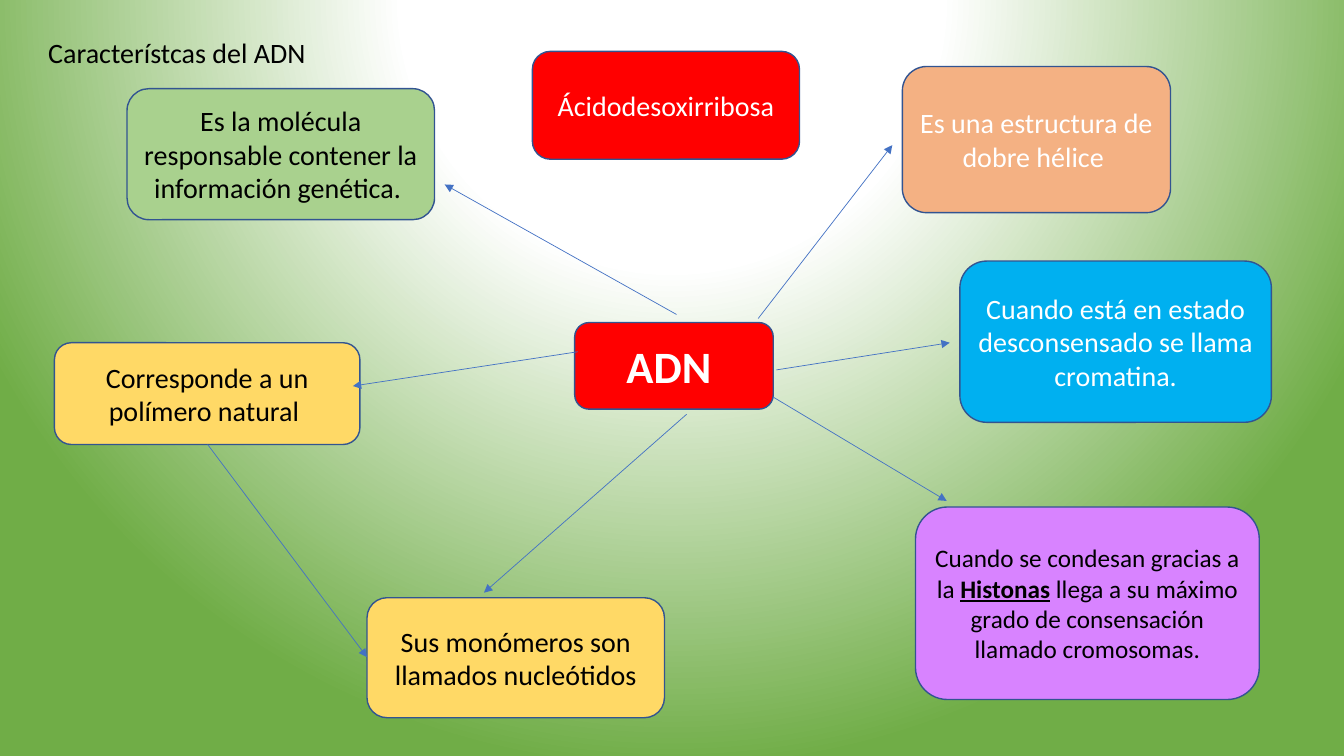
from pptx import Presentation
from pptx.dml.color import RGBColor
from pptx.enum import shapes, text
from pptx.oxml import parse_xml
from pptx.oxml.ns import nsdecls
from pptx.util import Inches, Pt


def color(hex_value):
    return RGBColor.from_string(hex_value)


def add_run(paragraph, words, size, ink, bold=False, underline=False):
    run = paragraph.add_run()
    run.text = words
    run.font.name = "Calibri"
    run.font.size = Pt(size)
    run.font.color.rgb = color(ink)
    run.font.bold = bold
    run.font.underline = underline


deck = Presentation()
deck.slide_width = Inches(13.33)
deck.slide_height = Inches(7.5)
slide = deck.slides.add_slide(deck.slide_layouts[6])

glow_stops = "".join(
    f'<a:gs pos="{percent * 1000}"><a:srgbClr val="{tint}"/></a:gs>'
    for percent, tint in [(0, "FFFFFF"), (35, "FFFFFF"), (100, "70AD47")]
)
slide.element.cSld.insert(0, parse_xml(
    f'<p:bg {nsdecls("p", "a")}><p:bgPr><a:gradFill rotWithShape="1">'
    f'<a:gsLst>{glow_stops}</a:gsLst><a:path path="circle">'
    '<a:fillToRect l="50000" t="-80000" r="50000" b="180000"/></a:path>'
    '</a:gradFill><a:effectLst/></p:bgPr></p:bg>'
))

BLACK, WHITE = "000000", "FFFFFF"
ideas = [
    (5.7, 3.2, 1.97, 0.86, "FF0000", 32, WHITE, [("ADN ", True, False)]),
    (0.54, 3.4, 3.03, 1.01, "FFD966", 20, BLACK,
     [("Corresponde a un polímero natural ", False, False)]),
    (1.26, 0.88, 3.05, 1.3, "A9D18E", 20, BLACK,
     [("Es la molécula responsable contener la información genética. ", False, False)]),
    (3.64, 5.93, 2.95, 1.19, "FFD966", 20, BLACK,
     [("Sus monómeros son llamados nucleótidos", False, False)]),
    (9.52, 2.59, 3.09, 1.6, "00B0F0", 20, WHITE,
     [("Cuando está en estado desconsensado se llama cromatina.", False, False)]),
    (8.95, 0.66, 2.66, 1.45, "F4B183", 20, WHITE,
     [("Es una estructura de dobre hélice ", False, False)]),
    (9.08, 5.03, 3.41, 1.91, "D883FF", 18, BLACK,
     [("Cuando se condesan gracias a la ", False, False),
      ("Histonas", True, True),
      (" llega a su máximo grado de consensación llamado cromosomas.", False, False)]),
    (5.28, 0.51, 2.65, 1.07, "FF0000", 20, WHITE,
     [("Ácidodesoxirribosa", False, False)]),
]
for left, top, width, height, fill, size, ink, phrases in ideas:
    idea = slide.shapes.add_shape(
        shapes.MSO_SHAPE.ROUNDED_RECTANGLE,
        Inches(left), Inches(top), Inches(width), Inches(height))
    idea.shadow.inherit = False
    idea.fill.solid()
    idea.fill.fore_color.rgb = color(fill)
    idea.line.color.rgb = color("325491")
    idea.line.width = Pt(1)
    idea.text_frame.word_wrap = True
    idea.text_frame.vertical_anchor = text.MSO_ANCHOR.MIDDLE
    paragraph = idea.text_frame.paragraphs[0]
    paragraph.alignment = text.PP_ALIGN.CENTER
    for words, bold, underline in phrases:
        add_run(paragraph, words, size, ink, bold, underline)

heading = slide.shapes.add_textbox(Inches(0.38), Inches(0.3), Inches(2.84), Inches(0.44))
heading.text_frame.word_wrap = True
heading.text_frame.auto_size = text.MSO_AUTO_SIZE.SHAPE_TO_FIT_TEXT
add_run(heading.text_frame.paragraphs[0], "Característcas del ADN", 20, BLACK)

links = [
    (7.52, 3.16, 8.85, 1.44),
    (6.71, 3.12, 4.41, 1.83),
    (5.73, 3.49, 3.5, 3.83),
    (6.81, 4.11, 4.8, 5.88),
    (7.67, 3.94, 9.39, 4.97),
    (7.7, 3.67, 9.42, 3.4),
    (2.06, 4.41, 3.64, 6.52),
]
for ends in links:
    arrow = slide.shapes.add_connector(
        shapes.MSO_CONNECTOR.STRAIGHT, *[Inches(end) for end in ends])
    arrow.line.color.rgb = color("4472C4")
    arrow.line.width = Pt(0.5)
    arrow.line._get_or_add_ln().append(
        parse_xml(f'<a:tailEnd {nsdecls("a")} type="triangle"/>'))
    arrow.element.spPr.append(parse_xml(f'<a:effectLst {nsdecls("a")}/>'))

deck.save("out.pptx")
